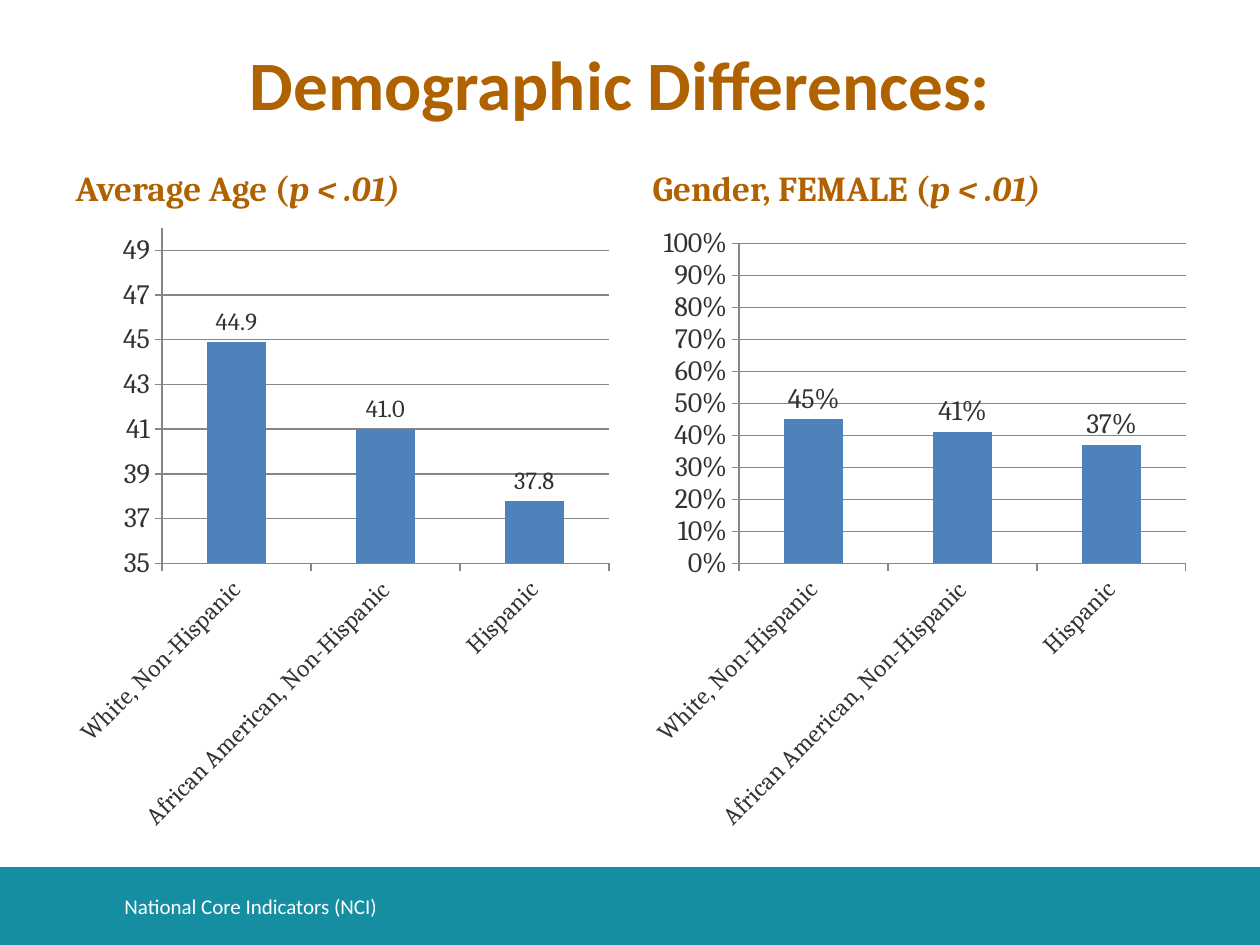
from pptx import Presentation
from pptx.chart.data import CategoryChartData
from pptx.dml.color import RGBColor
from pptx.enum.chart import XL_CHART_TYPE, XL_LABEL_POSITION, XL_TICK_MARK
from pptx.enum.shapes import MSO_SHAPE
from pptx.enum.text import MSO_ANCHOR, MSO_AUTO_SIZE, PP_ALIGN
from pptx.util import Cm, Pt

BROWN = RGBColor(0xB0, 0x61, 0x00)
TEAL = RGBColor(0x16, 0x8E, 0xA2)
WHITE = RGBColor(0xFF, 0xFF, 0xFF)
DARK = RGBColor(0x33, 0x33, 0x33)
BLUE = RGBColor(0x4F, 0x81, 0xBD)
GRAY = RGBColor(0x86, 0x86, 0x86)

GROUPS = ["White, Non-Hispanic", "African American, Non-Hispanic", "Hispanic"]
COLUMN_WIDTH = Cm(11.23)
CHART_TOP = Cm(4.34)


def place(shape, left, top, width, height):
    shape.left, shape.top, shape.width, shape.height = left, top, width, height


def add_run(paragraph, text, font_name, size, color, bold=False, italic=False):
    run = paragraph.add_run()
    run.text = text
    run.font.name = font_name
    run.font.size = Pt(size)
    run.font.color.rgb = color
    run.font.bold = bold
    run.font.italic = italic


presentation = Presentation()
presentation.slide_width = Cm(25.4)
presentation.slide_height = Cm(19.05)
slide = presentation.slides.add_slide(presentation.slide_layouts[4])
placeholders = {shape.placeholder_format.idx: shape for shape in slide.placeholders}

# Footer band
band = slide.shapes.add_shape(MSO_SHAPE.RECTANGLE, 0, Cm(17.48), Cm(25.4), Cm(1.57))
band.shadow.inherit = False
band.fill.solid()
band.fill.fore_color.rgb = TEAL
band.line.fill.background()

footer = slide.shapes.add_textbox(Cm(2.26), Cm(17.75), Cm(18.8), Cm(1.02))
footer.text_frame.word_wrap = True
footer.text_frame.vertical_anchor = MSO_ANCHOR.MIDDLE
add_run(footer.text_frame.paragraphs[0], "National Core Indicators (NCI)",
        "Calibri", 12, WHITE)

# Title
title = slide.shapes.title
place(title, Cm(1.07), Cm(0.76), Cm(22.86), Cm(1.8))
title.text_frame.auto_size = MSO_AUTO_SIZE.NONE
title.text_frame.vertical_anchor = MSO_ANCHOR.MIDDLE
title.text_frame.paragraphs[0].alignment = PP_ALIGN.CENTER
add_run(title.text_frame.paragraphs[0], "Demographic Differences:",
        "Calibri", 39.6, BROWN, bold=True)

# Two columns: heading above a chart
# heading placeholder, left, heading top, heading, values,
# axis minimum, maximum and step, axis format, label format, label size
columns = [
    (1, Cm(1.27), Cm(2.57), "Average Age (", [44.9, 41, 37.8],
     35, 50, 2, "0", "0.0", 14),
    (3, Cm(12.9), Cm(2.82), "Gender, FEMALE (", [0.45, 0.41, 0.37],
     0, 1, 0.1, "0%", "0%", 16),
]
for (index, left, top, heading_text, values, minimum, maximum, step,
     axis_format, label_format, label_size) in columns:
    heading = placeholders[index]
    place(heading, left, top, COLUMN_WIDTH, CHART_TOP - top)
    heading.text_frame.auto_size = MSO_AUTO_SIZE.NONE
    heading.text_frame.vertical_anchor = MSO_ANCHOR.BOTTOM
    paragraph = heading.text_frame.paragraphs[0]
    paragraph.space_before = Pt(0)
    add_run(paragraph, heading_text, "Cambria", 20, BROWN, bold=True)
    add_run(paragraph, "p < .01)", "Cambria", 20, BROWN, bold=True, italic=True)

    chart_data = CategoryChartData()
    chart_data.categories = GROUPS
    chart_data.add_series("Series 1", values)
    chart = slide.shapes.add_chart(XL_CHART_TYPE.COLUMN_CLUSTERED, left, CHART_TOP,
                                   COLUMN_WIDTH, Cm(12.67), chart_data).chart
    chart.has_legend = False
    chart.has_title = False
    chart.font.name = "Cambria"
    chart.font.size = Pt(10)
    chart.font.color.rgb = DARK

    # Axes
    value_axis, category_axis = chart.value_axis, chart.category_axis
    for axis, size in ((value_axis, 16), (category_axis, 14)):
        axis.major_tick_mark = XL_TICK_MARK.OUTSIDE
        axis.minor_tick_mark = XL_TICK_MARK.NONE
        axis.format.line.color.rgb = GRAY
        axis.tick_labels.font.size = Pt(size)
        axis.tick_labels.font.name = "Cambria"
        axis.tick_labels.font.color.rgb = DARK
    category_axis._element.txPr.bodyPr.set("rot", "-2700000")
    value_axis.minimum_scale = minimum
    value_axis.maximum_scale = maximum
    value_axis.major_unit = step
    value_axis.has_major_gridlines = True
    value_axis.major_gridlines.format.line.color.rgb = GRAY
    value_axis.tick_labels.number_format = axis_format
    value_axis.tick_labels.number_format_is_linked = False

    # Bars and their labels
    plot = chart.plots[0]
    plot.gap_width = 150
    plot.vary_by_categories = False
    series = plot.series[0]
    series.format.fill.solid()
    series.format.fill.fore_color.rgb = BLUE
    labels = series.data_labels
    labels.show_value = True
    labels.position = XL_LABEL_POSITION.OUTSIDE_END
    labels.number_format = label_format
    labels.number_format_is_linked = False
    labels.font.size = Pt(label_size)
    labels.font.name = "Cambria"
    labels.font.color.rgb = DARK

# Unused content placeholders
for index in (2, 4):
    element = placeholders[index]._element
    element.getparent().remove(element)

presentation.save("out.pptx")
